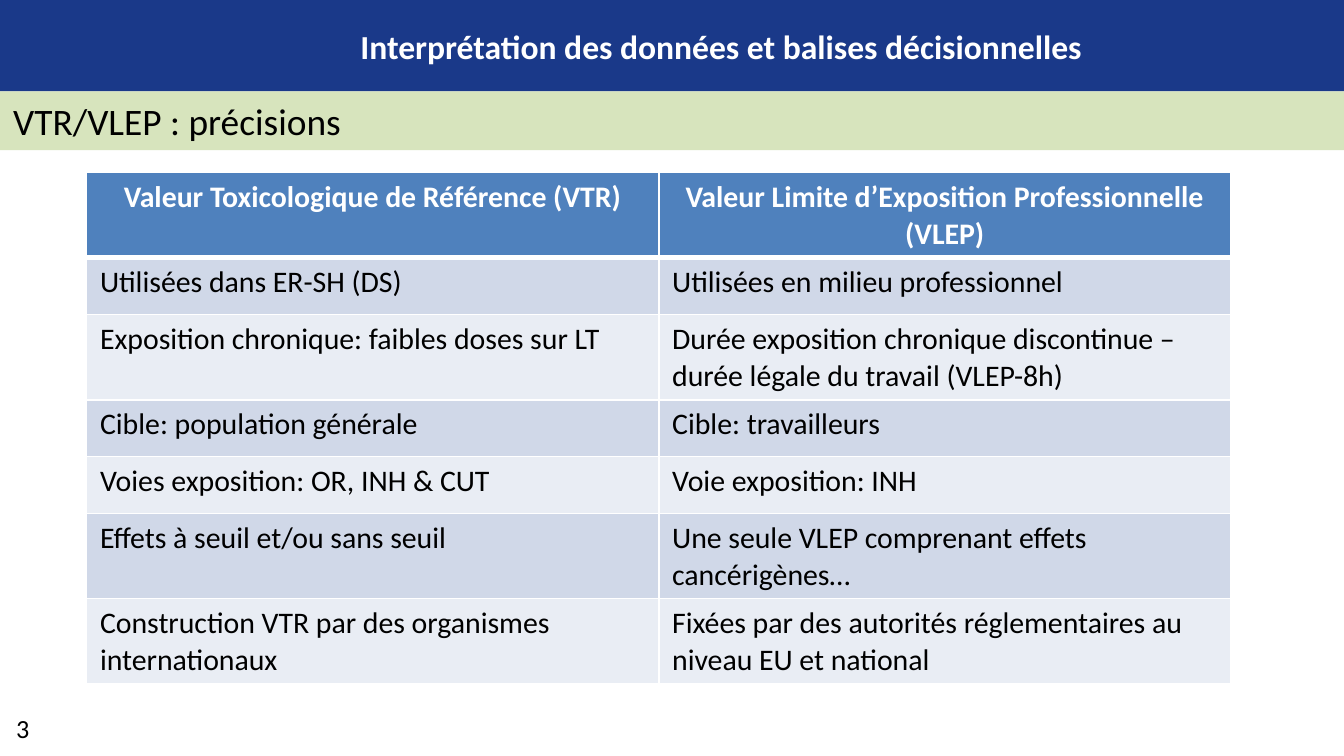
from dataclasses import dataclass

from lxml.etree import SubElement
from pptx import Presentation
from pptx.dml.color import RGBColor
from pptx.enum.shapes import MSO_SHAPE as Shape
from pptx.enum.text import MSO_ANCHOR as Anchor, PP_ALIGN as Align
from pptx.oxml.ns import qn
from pptx.util import Pt


@dataclass(frozen=True)
class Theme:
    font: str = "Calibri"
    navy: str = "1A3989"
    green: str = "D7E4BD"
    header: str = "4F81BD"
    bands: tuple = ("D0D8E8", "E9EDF4")
    white: str = "FFFFFF"
    black: str = "000000"
    title_size: float = 18
    subtitle_size: float = 20
    table_size: float = 16
    number_size: float = 14


@dataclass(frozen=True)
class Box:
    left: float
    top: float
    width: float
    height: float

    def lengths(self) -> tuple:
        return Pt(self.left), Pt(self.top), Pt(self.width), Pt(self.height)


@dataclass(frozen=True)
class Style:
    size: float
    color: str
    bold: bool = False
    align: Align = Align.LEFT


@dataclass(frozen=True)
class Row:
    vtr: str
    vlep: str
    height: float


THEME = Theme()
SHORT, TALL = 30.5, 41
ROWS = (
    Row("Valeur Toxicologique de Référence (VTR)",
        "Valeur Limite d’Exposition Professionnelle (VLEP)", TALL),
    Row("Utilisées dans ER-SH (DS)", "Utilisées en milieu professionnel", SHORT),
    Row("Exposition chronique: faibles doses sur LT",
        "Durée exposition chronique discontinue – durée légale du travail (VLEP-8h)", TALL),
    Row("Cible: population générale", "Cible: travailleurs", SHORT),
    Row("Voies exposition: OR, INH & CUT", "Voie exposition: INH", SHORT),
    Row("Effets à seuil et/ou sans seuil",
        "Une seule VLEP comprenant effets cancérigènes…", TALL),
    Row("Construction VTR par des organismes internationaux",
        "Fixées par des autorités réglementaires au niveau EU et national", TALL),
)


def write(text_frame, text: str, style: Style) -> None:
    paragraph = text_frame.paragraphs[0]
    paragraph.alignment = style.align
    run = paragraph.add_run()
    run.text = text
    run.font.name = THEME.font
    run.font.size = Pt(style.size)
    run.font.bold = style.bold
    run.font.color.rgb = RGBColor.from_string(style.color)


def add_band(slide, box: Box, color: str):
    shape = slide.shapes.add_shape(Shape.RECTANGLE, *box.lengths())
    shape.shadow.inherit = False
    shape.fill.solid()
    shape.fill.fore_color.rgb = RGBColor.from_string(color)
    shape.line.fill.background()
    return shape


def add_text(slide, box: Box, text: str, style: Style, wrap: bool = True) -> None:
    text_frame = slide.shapes.add_textbox(*box.lengths()).text_frame
    text_frame.word_wrap = wrap
    write(text_frame, text, style)


def add_border(cell, side: str, width: float) -> None:
    line = SubElement(cell._tc.get_or_add_tcPr(), qn(f"a:ln{side}"), w=str(Pt(width)))
    fill = SubElement(line, qn("a:solidFill"))
    SubElement(fill, qn("a:srgbClr"), val=THEME.white)


def fill_cell(cell, text: str, color: str, style: Style, bottom: float, top: float) -> None:
    for side, width in (("L", 1), ("R", 1), ("T", top), ("B", bottom)):
        add_border(cell, side, width)
    cell.fill.solid()
    cell.fill.fore_color.rgb = RGBColor.from_string(color)
    write(cell.text_frame, text, style)


def add_comparison(slide, box: Box, rows: tuple) -> None:
    table = slide.shapes.add_table(len(rows), 2, *box.lengths()).table
    for column in table.columns:
        column.width = Pt(box.width / 2)
    header = Style(THEME.table_size, THEME.white, True, Align.CENTER)
    body = Style(THEME.table_size, THEME.black)
    for index, row in enumerate(rows):
        table.rows[index].height = Pt(row.height)
        is_header = index == 0
        color = THEME.header if is_header else THEME.bands[(index - 1) % 2]
        for column, text in enumerate((row.vtr, row.vlep)):
            fill_cell(table.cell(index, column), text, color,
                      header if is_header else body,
                      bottom=3 if is_header else 1, top=3 if index == 1 else 1)


def main() -> None:
    presentation = Presentation()
    presentation.slide_width, presentation.slide_height = Pt(720), Pt(405)
    slide = presentation.slides.add_slide(presentation.slide_layouts[6])

    # Title band and page number
    add_band(slide, Box(0, 0, 720, 49), THEME.navy)
    add_text(slide, Box(62.5, 10.5, 648, 29), "Interprétation des données et balises décisionnelles",
             Style(THEME.title_size, THEME.white, True, Align.CENTER))
    add_text(slide, Box(1.5, 378, 40, 24.5), "3",
             Style(THEME.number_size, THEME.black), wrap=False)

    # Subtitle band
    subtitle = add_band(slide, Box(0, 49, 720, 31.5), THEME.green)
    subtitle.text_frame.vertical_anchor = Anchor.TOP
    write(subtitle.text_frame, "VTR/VLEP : précisions", Style(THEME.subtitle_size, THEME.black))

    # Comparison table
    add_comparison(slide, Box(46.4, 92.5, 613, sum(row.height for row in ROWS)), ROWS)

    presentation.save("out.pptx")


if __name__ == "__main__":
    main()
